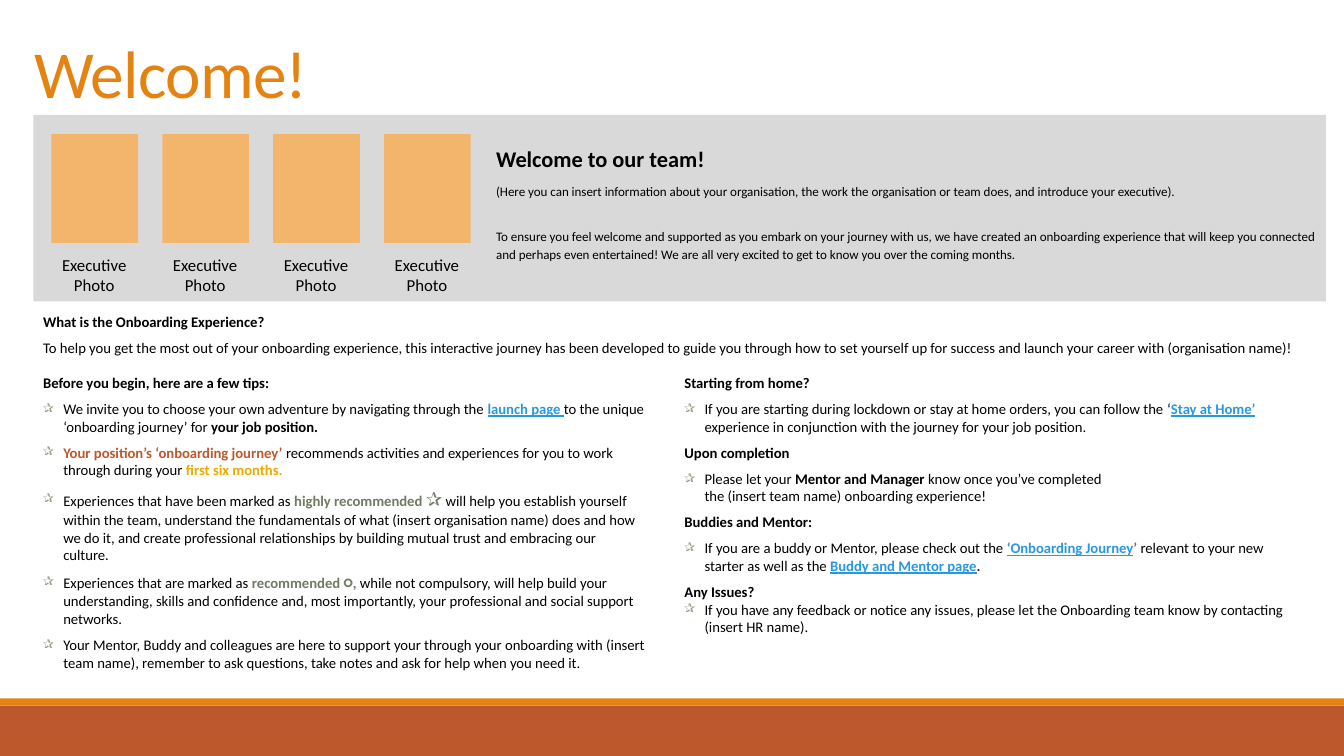
from dataclasses import dataclass
from typing import NamedTuple

from lxml import etree
from pptx import Presentation
from pptx.dml.color import RGBColor
from pptx.enum.shapes import MSO_SHAPE
from pptx.enum.text import MSO_ANCHOR, PP_ALIGN
from pptx.oxml.ns import qn
from pptx.util import Emu, Pt

RECTANGLE = MSO_SHAPE.RECTANGLE
TOP, MIDDLE, BOTTOM = MSO_ANCHOR.TOP, MSO_ANCHOR.MIDDLE, MSO_ANCHOR.BOTTOM
LEFT, CENTER = PP_ALIGN.LEFT, PP_ALIGN.CENTER

BLACK = RGBColor(0x00, 0x00, 0x00)
GREY = RGBColor(0xD9, 0xD9, 0xD9)
ORANGE = RGBColor(0xE4, 0x83, 0x12)
PALE_ORANGE = RGBColor(0xF3, 0xB5, 0x6C)
RUST = RGBColor(0xBD, 0x58, 0x2C)
GOLD = RGBColor(0xEA, 0xAA, 0x00)
GREEN = RGBColor(0x6F, 0x7B, 0x63)
LINK_BLUE = RGBColor(0x29, 0x98, 0xE3)
NAVY = RGBColor(0x2A, 0x4F, 0x8A)
DARK_RED = RGBColor(0xA2, 0x00, 0x00)
STAR_COLOR = "94A088"

FONT = "Calibri"
BODY_SIZE = 10.5
EMU_PER_PX = 9144  # 100 px to the inch


class Span(NamedTuple):
    text: str
    color: RGBColor = BLACK
    bold: bool = False
    underline: bool = False
    size: float = BODY_SIZE


@dataclass
class Entry:
    spans: list[Span]
    bullet: bool = True
    space_after: int = 6


class Box(NamedTuple):
    left: int
    top: int
    width: int
    height: int


def px(length: int) -> Emu:
    return Emu(length * EMU_PER_PX)


def link(text: str) -> Span:
    return Span(text, LINK_BLUE, True, True)


def strong(text: str, color: RGBColor = BLACK, size: float = BODY_SIZE) -> Span:
    return Span(text, color, True, size=size)


def heading(text: str, space_after: int = 6) -> Entry:
    return Entry([strong(text)], False, space_after)


def add_block(slide, box: Box, color: RGBColor):
    block = slide.shapes.add_shape(RECTANGLE, *map(px, box))
    block.shadow.inherit = False
    block.fill.solid()
    block.fill.fore_color.rgb = color
    block.line.fill.background()
    return block


def add_text_frame(slide, box: Box, wrap: bool = True):
    frame = slide.shapes.add_textbox(*map(px, box)).text_frame
    frame.word_wrap = wrap
    frame.vertical_anchor = TOP
    return frame


def set_font(paragraph, size: float, color: RGBColor = BLACK) -> None:
    paragraph.font.name = FONT
    paragraph.font.size = Pt(size)
    paragraph.font.color.rgb = color


def add_star_bullet(paragraph) -> None:
    properties = paragraph._p.get_or_add_pPr()
    properties.set("marL", str(px(20)))
    properties.set("indent", str(px(-20)))
    bullet_color = etree.SubElement(properties, qn("a:buClr"))
    etree.SubElement(bullet_color, qn("a:srgbClr"), val=STAR_COLOR)
    etree.SubElement(properties, qn("a:buSzPct"), val="106000")
    etree.SubElement(properties, qn("a:buChar"), char="✰")


def add_span(paragraph, span: Span) -> None:
    for number, line in enumerate(span.text.split("\n")):
        if number:
            paragraph.add_line_break()
        run = paragraph.add_run()
        run.text = line
        if span.color != BLACK:
            run.font.color.rgb = span.color
        if span.bold:
            run.font.bold = True
        if span.underline:
            run.font.underline = True
        if span.size != BODY_SIZE:
            run.font.size = Pt(span.size)


def add_entries(slide, box: Box, entries: list[Entry]) -> None:
    frame = add_text_frame(slide, box)
    for number, entry in enumerate(entries):
        paragraph = frame.add_paragraph() if number else frame.paragraphs[0]
        if entry.bullet:
            add_star_bullet(paragraph)
        paragraph.space_after = Pt(entry.space_after)
        set_font(paragraph, BODY_SIZE)
        for span in entry.spans:
            add_span(paragraph, span)


def add_title(slide) -> None:
    title = slide.shapes.title
    title.left, title.top, title.width, title.height = map(px, Box(24, -43, 1100, 159))
    title.text_frame.vertical_anchor = BOTTOM
    paragraph = title.text_frame.paragraphs[0]
    paragraph.text = "Welcome!"
    paragraph.alignment = LEFT
    paragraph.line_spacing = 0.85
    set_font(paragraph, 48, ORANGE)
    paragraph.runs[0]._r.get_or_add_rPr().set("spc", "-50")


def add_banner(slide) -> None:
    frame = add_block(slide, Box(33, 114, 1282, 185), GREY).text_frame
    frame.word_wrap = True
    frame.vertical_anchor = MIDDLE
    frame.margin_left = px(459)
    frame.margin_top = frame.margin_right = frame.margin_bottom = px(6)
    for number, (text, space_before) in enumerate(BANNER_TEXT):
        paragraph = frame.add_paragraph() if number else frame.paragraphs[0]
        paragraph.text = text
        paragraph.alignment = LEFT
        paragraph.line_spacing = Pt(13)
        paragraph.space_before = Pt(space_before)
        paragraph.space_after = Pt(6)
        set_font(paragraph, 16)
        paragraph.font.bold = number == 0
        if number:
            paragraph.runs[0]._r.get_or_add_rPr().set("baseline", "-25000")


def add_executive(slide, left: int) -> None:
    add_block(slide, Box(left, 133, 86, 108), PALE_ORANGE)
    caption = add_text_frame(slide, Box(left, 248, 85, 50), wrap=False).paragraphs[0]
    caption.text = "Executive\vPhoto"
    caption.alignment = CENTER
    set_font(caption, 12)


BANNER_TEXT = [
    ("Welcome to our team!", 0),
    ("(Here you can insert information about your organisation, the work the organisation or team does, and introduce your executive).", 0),
    ("To ensure you feel welcome and supported as you embark on your journey with us, we have created an onboarding experience that will keep you connected and perhaps even entertained! We are all very excited to get to know you over the coming months.", 13),
]
INTRODUCTION = [
    heading("What is the Onboarding Experience?"),
    Entry([Span("To help you get the most out of your onboarding experience, this interactive journey has been developed to guide you through how to set yourself up for success and launch your career with (organisation name)!")], False, 0),
]
TIPS = [
    heading("Before you begin, here are a few tips:"),
    Entry([Span("We invite you to choose your own adventure by navigating through the "), link("launch page "),
           Span("to the unique ‘onboarding journey’ for "), strong("your job position.")]),
    Entry([strong("Your position’s ‘onboarding journey’ ", RUST),
           Span("recommends activities and experiences for you to work through during your "),
           strong("first six months.", GOLD)]),
    Entry([Span("Experiences that have been marked as "), strong("highly recommended ", GREEN),
           strong("✰", GREEN, 14), strong(" ", GREEN),
           Span("will help you establish yourself within the team, understand the fundamentals of what (insert organisation name) does and how we do it, and create professional relationships by building mutual trust and embracing our culture.")]),
    Entry([Span("Experiences that are marked as "), strong("recommended ", GREEN),
           strong("○", GREEN, 12), strong(", ", GREEN),
           Span("while not compulsory, will help build your understanding, skills and confidence and, most importantly, your professional and social support networks.")]),
    Entry([Span("Your Mentor, Buddy and colleagues are here to support your through your onboarding with (insert team name), remember to ask questions, take notes and ask for help when you need it.")]),
]
NEXT_STEPS = [
    heading("Starting from home?"),
    Entry([Span("If you are starting during lockdown or stay at home orders, you can follow the "),
           strong("‘", NAVY), link("Stay at Home’"),
           Span(" experience in conjunction with the journey for your job position.")]),
    heading("Upon completion"),
    Entry([Span("Please let your "), strong("Mentor and Manager "),
           Span("know once you’ve completed \nthe (insert team name) onboarding experience!")]),
    heading("Buddies and Mentor:"),
    Entry([Span("If you are a buddy or Mentor, please check out the "), link("‘Onboarding Journey"),
           strong("’ ", RUST), Span("relevant to your new starter as well as the "),
           link("Buddy and Mentor page"), strong(".", DARK_RED)]),
    heading("Any Issues?", 0),
    Entry([Span("If you have any feedback or notice any issues, please let the Onboarding team know by contacting (insert HR name).")]),
]


def main() -> None:
    deck = Presentation()
    deck.slide_width, deck.slide_height = px(1333), px(750)
    slide = deck.slides.add_slide(deck.slide_layouts[5])

    # Footer bars
    add_block(slide, Box(0, 700, 1333, 50), RUST)
    add_block(slide, Box(0, 693, 1333, 7), ORANGE)

    # Title, banner and executives
    add_title(slide)
    add_banner(slide)
    for position in range(4):
        add_executive(slide, 51 + 110 * position)

    # Introduction and the two columns
    add_entries(slide, Box(33, 305, 1285, 54), INTRODUCTION)
    for column, entries in enumerate((TIPS, NEXT_STEPS)):
        add_entries(slide, Box(33 + 636 * column, 366, 617, 310), entries)

    deck.save("out.pptx")


if __name__ == "__main__":
    main()
